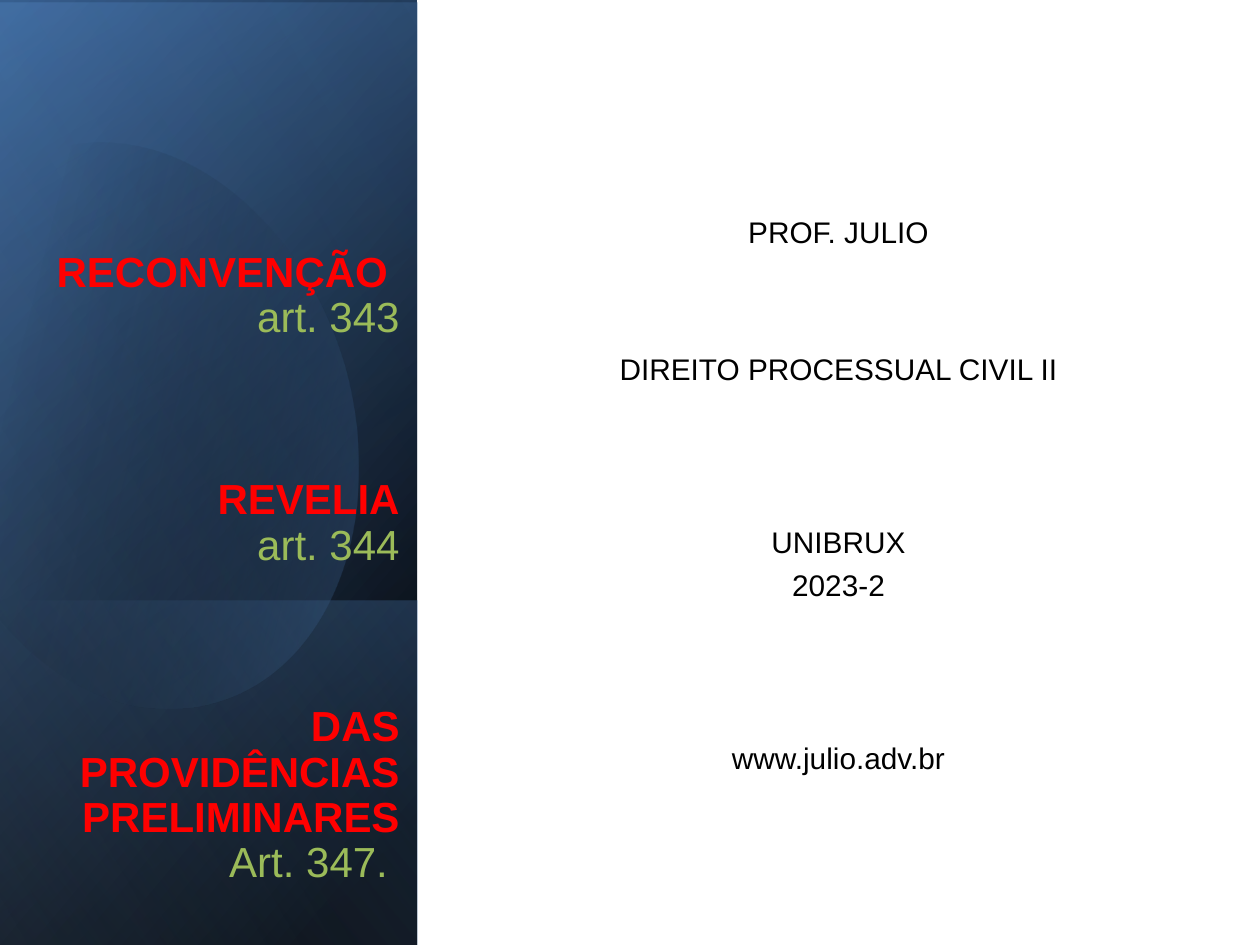
from math import cos, radians, sin

from lxml.etree import SubElement
from pptx import Presentation
from pptx.dml.color import RGBColor
from pptx.enum.shapes import MSO_SHAPE as Shape
from pptx.enum.text import MSO_ANCHOR as Anchor, PP_ALIGN as Align
from pptx.oxml.ns import qn
from pptx.util import Inches, Pt

RED, GREEN, BLUE, BLACK, WHITE = "FF0000", "9BBB59", "4F81BD", "000000", "FFFFFF"
PANEL_WIDTH = 3.31
UNITS_PER_INCH = 1000


def color(hex_code):
    return RGBColor.from_string(hex_code)


def add_run(paragraph, text, size=17, hue=BLACK, bold=False, font="Arial"):
    run = paragraph.add_run()
    run.text = text
    run.font.name = font
    run.font.size = Pt(size)
    run.font.bold = bold
    run.font.color.rgb = color(hue)


def turn(point, center, degrees):
    angle = radians(degrees)
    dx, dy = point[0] - center[0], point[1] - center[1]
    return (
        center[0] + dx * cos(angle) - dy * sin(angle),
        center[1] + dx * sin(angle) + dy * cos(angle),
    )


class Deck:
    line_spacing = 0.9

    def __init__(self, width, height):
        self.prs = Presentation()
        self.prs.slide_width, self.prs.slide_height = Inches(width), Inches(height)
        self.slide = self.prs.slides.add_slide(self.prs.slide_layouts[6])

    def plain(self, shape):
        shape.shadow.inherit = False
        shape.line.fill.background()
        return shape

    def rectangle(self, left, top, width, height, fill=WHITE):
        box = map(Inches, (left, top, width, height))
        shape = self.plain(self.slide.shapes.add_shape(Shape.RECTANGLE, *box))
        shape.fill.solid()
        shape.fill.fore_color.rgb = color(fill)
        return shape

    def gradient(self, shape, stops, angle):
        shape.fill.gradient()
        grad = shape.element.spPr.find(qn("a:gradFill"))
        for child in list(grad):
            grad.remove(child)
        grad.set("rotWithShape", "1")
        stop_list = SubElement(grad, qn("a:gsLst"))
        for position, hue, opacity in stops:
            stop = SubElement(stop_list, qn("a:gs"), pos=str(position * 1000))
            tint = SubElement(stop, qn("a:srgbClr"), val=hue)
            SubElement(tint, qn("a:alpha"), val=str(opacity * 1000))
        SubElement(grad, qn("a:lin"), ang=str(angle * 60000), scaled="0")

    def panel_layer(self, top, height, stops, angle):
        left = (PANEL_WIDTH - height) / 2
        upright_top = top + (height - PANEL_WIDTH) / 2
        shape = self.rectangle(left, upright_top, height, PANEL_WIDTH)
        shape.rotation = 90
        shape.element.spPr.find(qn("a:xfrm")).set("flipH", "1")
        self.gradient(shape, stops, angle)

    def curved_outline(self, start, segments, center, rotation, stops, angle):
        points = [start] + [point for segment in segments for point in segment]
        upright = [
            tuple(UNITS_PER_INCH * value for value in turn(point, center, -rotation))
            for point in points
        ]
        builder = self.slide.shapes.build_freeform(
            *upright[0], scale=Inches(1) / UNITS_PER_INCH
        )
        builder.add_line_segments(upright[1:], close=True)
        shape = self.plain(builder.convert_to_shape())
        lines = iter(list(shape.element.iter(qn("a:lnTo"))))
        for segment in segments:
            steps = [next(lines) for _ in segment]
            if len(steps) == 3:
                curve = SubElement(steps[0].getparent(), qn("a:cubicBezTo"))
                steps[0].addprevious(curve)
                for step in steps:
                    curve.append(step[0])
                    step.getparent().remove(step)
        shape.rotation = rotation
        self.gradient(shape, stops, angle)

    def text(self, left, top, width, height, paragraphs, align, anchor,
             top_inset=0.05, bottom_inset=0.05):
        box = map(Inches, (left, top, width, height))
        frame = self.slide.shapes.add_textbox(*box).text_frame
        frame.word_wrap = True
        frame.vertical_anchor = anchor
        frame.margin_top, frame.margin_bottom = Inches(top_inset), Inches(bottom_inset)
        for index, (gap, runs) in enumerate(paragraphs):
            paragraph = frame.add_paragraph() if index else frame.paragraphs[0]
            paragraph.alignment = align
            paragraph.line_spacing = self.line_spacing
            paragraph.space_before = Pt(gap)
            for position, (words, style) in enumerate(runs):
                if position:
                    paragraph.add_line_break()
                add_run(paragraph, words, **style)


def main():
    deck = Deck(10, 7.5)
    deck.rectangle(0, 0, 10, 7.5)

    deck.panel_layer(0, 7.5, [(8, BLACK, 100), (100, "376092", 100)], 50)
    deck.panel_layer(0.02, 7.5, [(0, BLACK, 0), (99, BLUE, 46)], 30)
    deck.panel_layer(4.77, 2.74, [(2, BLUE, 29), (100, BLACK, 30)], 130)

    petal = [
        [(1.71, 1.22), (2.44, 1.92), (2.73, 2.9)],
        [(3.07, 4.12), (2.62, 5.31), (1.71, 5.57)],
        [(1.14, 5.74), (0.53, 5.5), (0.07, 5)],
        [(-0.03, 4.88)],
        [(-0.25, 1.66)],
        [(-0.15, 1.54)],
        [(0.02, 1.37), (0.22, 1.25), (0.45, 1.18)],
        [(0.62, 1.13), (0.79, 1.12), (0.96, 1.14)],
    ]
    deck.curved_outline((0.96, 1.14), petal, (1.19, 3.34), 343.9,
                        [(29, BLACK, 0), (100, BLUE, 43)], 30)

    deck.panel_layer(0, 7.5, [(0, BLACK, 0), (99, "95B3D7", 11)], 120)

    topics = [
        ("RECONVENÇÃO ", "art. 343"),
        ("REVELIA", "art. 344"),
        ("DAS PROVIDÊNCIAS PRELIMINARES", "Art. 347. "),
    ]
    heading = dict(size=24, hue=RED, bold=True)
    article = dict(size=24, hue=GREEN)
    topic_paragraphs = [
        (78 if index else 0, [(name, heading), (reference, article)])
        for index, (name, reference) in enumerate(topics)
    ]
    deck.text(0, 0.01, 3.27, 7.48, topic_paragraphs, Align.RIGHT, Anchor.BOTTOM,
              bottom_inset=0.45)

    credits = [
        (0, "PROF. JULIO"),
        (59.5, "DIREITO PROCESSUAL CIVIL II"),
        (80.5, "UNIBRUX"),
        (6.4, "2023-2"),
        (80.5, "www.julio.adv.br"),
    ]
    credit_paragraphs = [(gap, [(line, {})]) for gap, line in credits]
    deck.text(PANEL_WIDTH, -0.01, 6.69, 7.5, credit_paragraphs, Align.CENTER,
              Anchor.MIDDLE, top_inset=0.46)

    deck.prs.save("out.pptx")


if __name__ == "__main__":
    main()
